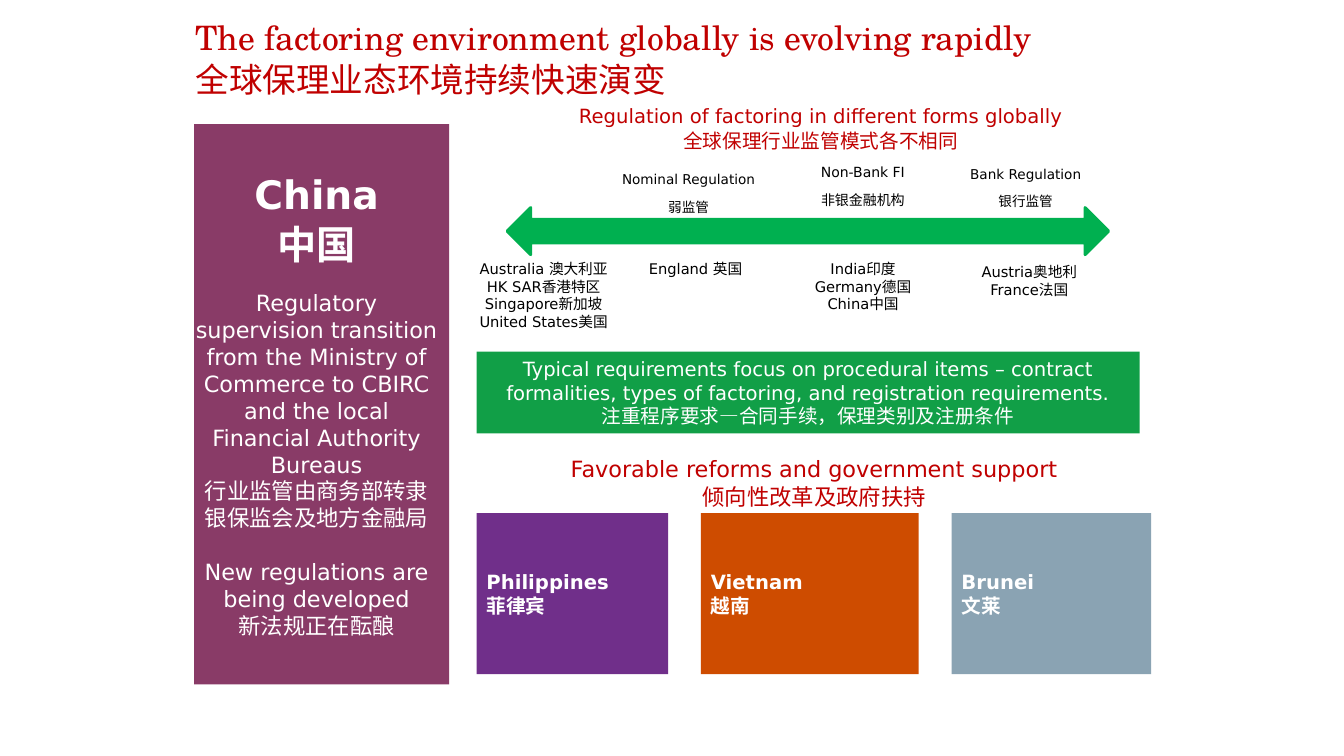
from pptx import Presentation
from pptx.dml.color import RGBColor
from pptx.enum import shapes, text
from pptx.util import Cm, Pt

COLORS = {
    "red": "C00000", "white": "FFFFFF", "black": "000000", "plum": "893B67",
    "arrow": "00B050", "green": "119F47", "purple": "702F8A",
    "orange": "CE4C00", "steel": "8AA3B3",
}
BODY_FONT, TITLE_FONT = "DejaVu Sans", "TeX Gyre Schola"
CENTER, LEFT = text.PP_ALIGN.CENTER, text.PP_ALIGN.LEFT
SLIM_INSETS = (0.1, 0.05, 0.1, 0.05)
DEFAULT_INSETS = (0.25, 0.13, 0.25, 0.13)


def color(name):
    return RGBColor.from_string(COLORS[name])


def add_run(paragraph, words, size, ink, bold=False, font=BODY_FONT):
    run = paragraph.add_run()
    run.text = words
    run.font.name, run.font.size, run.font.bold = font, Pt(size), bold
    run.font.color.rgb = color(ink)


def write_lines(frame, lines, size, ink, bold=False, align=CENTER,
                before=0, spacing=1.0):
    """Append one paragraph per line, reusing the empty first paragraph."""
    for line in lines:
        first = frame.paragraphs[0]
        paragraph = frame.add_paragraph() if first.runs else first
        paragraph.alignment = align
        paragraph.space_before = Pt(before)
        paragraph.line_spacing = spacing
        add_run(paragraph, line, size, ink, bold)


def prepare_frame(shape, insets, anchor):
    frame = shape.text_frame
    frame.word_wrap = True
    frame.vertical_anchor = anchor
    (frame.margin_left, frame.margin_top,
     frame.margin_right, frame.margin_bottom) = map(Cm, insets)
    return frame


def add_box(slide, box, insets=DEFAULT_INSETS):
    shape = slide.shapes.add_textbox(*map(Cm, box))
    return prepare_frame(shape, insets, text.MSO_ANCHOR.TOP)


def add_block(slide, box, fill, insets=DEFAULT_INSETS,
              kind=shapes.MSO_SHAPE.RECTANGLE):
    shape = slide.shapes.add_shape(kind, *map(Cm, box))
    shape.shadow.inherit = False
    shape.fill.solid()
    shape.fill.fore_color.rgb = color(fill)
    shape.line.fill.background()
    prepare_frame(shape, insets, text.MSO_ANCHOR.MIDDLE)
    return shape


def add_title(slide, box):
    paragraph = add_box(slide, box, SLIM_INSETS).paragraphs[0]
    paragraph.line_spacing = 1.05
    add_run(paragraph, "The factoring environment globally is evolving rapidly",
            24, "red", font=TITLE_FONT)
    paragraph.add_line_break()
    add_run(paragraph, "全球保理业态环境持续快速演变", 24, "red", font=TITLE_FONT)


def add_heading(slide, box, lines, size):
    write_lines(add_box(slide, box, SLIM_INSETS), lines, size, "red", spacing=1.05)


def add_china_panel(slide, box):
    frame = add_block(slide, box, "plum", (0, 0.13, 0.25, 0.13)).text_frame
    write_lines(frame, ["China", "中国"], 28, "white", bold=True, before=2)
    sections = [
        (16, ["Regulatory supervision transition from the Ministry of Commerce "
              "to CBIRC and the local Financial Authority Bureaus",
              "行业监管由商务部转隶银保监会及地方金融局"]),
        (19, ["New regulations are being developed", "新法规正在酝酿"]),
    ]
    for gap, lines in sections:
        write_lines(frame, lines[:1], 16, "white", before=gap)
        write_lines(frame, lines[1:], 16, "white")


def add_regulation_scale(slide, box):
    """Double arrow with regulation types above it and countries below."""
    left, top, width, height = box
    arrow = add_block(slide, box, "arrow",
                      kind=shapes.MSO_SHAPE.LEFT_RIGHT_ARROW)
    arrow.line.color.rgb = color("arrow")
    arrow.line.width = Pt(2)

    regulation_types = [  # offset right, rise above arrow, width, size, lines
        (2.01, 1.04, 5.13, 9.7, ["Nominal Regulation", "弱监管"]),
        (6.55, 1.25, 4.83, 10, ["Non-Bank FI", "非银金融机构"]),
        (10.77, 1.19, 4.6, 9.7, ["Bank Regulation", "银行监管"]),
    ]
    for offset, rise, label_width, size, lines in regulation_types:
        frame = add_box(slide, (left + offset, top - rise, label_width, 1.3))
        write_lines(frame, lines, size, "black", before=8)

    countries = [  # offset right, drop below arrow, width, lines
        (-1.24, 0, 4.32, ["Australia 澳大利亚", "HK SAR香港特区",
                          "Singapore新加坡", "United States美国"]),
        (3.15, 0, 3.2, ["England 英国"]),
        (7.37, 0, 3.2, ["India印度", "Germany德国", "China中国"]),
        (11.56, 0.08, 3.2, ["Austria奥地利", "France法国"]),
    ]
    for offset, drop, label_width, lines in countries:
        frame = add_box(slide, (left + offset, top + height + drop,
                                label_width, 1.98))
        write_lines(frame, lines, 10.5, "black")


def add_requirements(slide, box):
    frame = add_block(slide, box, "green").text_frame
    write_lines(frame, [
        "Typical requirements focus on procedural items – contract formalities, "
        "types of factoring, and registration requirements.",
        "注重程序要求—合同手续，保理类别及注册条件"], 14, "white")


def add_reform_cards(slide, box):
    """Row of country cards with equal gaps across the box."""
    left, top, width, height = box
    cards = [
        (4.83, "purple", ["Philippines", "菲律宾"]),
        (5.49, "orange", ["Vietnam", "越南"]),
        (5.03, "steel", ["Brunei", "文莱"]),
    ]
    gap = (width - sum(card[0] for card in cards)) / (len(cards) - 1)
    for card_width, fill, lines in cards:
        card = add_block(slide, (left, top, card_width, height), fill)
        write_lines(card.text_frame, lines, 14, "white", bold=True, align=LEFT)
        left += card_width + gap


def main():
    presentation = Presentation()
    presentation.slide_width, presentation.slide_height = Cm(33.87), Cm(19.05)
    slide = presentation.slides.add_slide(presentation.slide_layouts[6])

    add_title(slide, (4.83, 0.33, 24.18, 2.26))
    add_china_panel(slide, (4.89, 3.13, 6.43, 14.12))
    add_heading(slide, (12.34, 2.54, 16.69, 1.37),
                ["Regulation of factoring in different forms globally",
                 "全球保理行业监管模式各不相同"], 14)
    add_regulation_scale(slide, (12.78, 5.23, 15.16, 1.19))
    add_requirements(slide, (12.01, 8.86, 16.71, 2.06))
    add_heading(slide, (12.01, 11.38, 17.02, 1.55),
                ["Favorable reforms and government support",
                 "倾向性改革及政府扶持"], 16)
    add_reform_cards(slide, (12.01, 12.93, 17, 4.06))
    presentation.save("out.pptx")


if __name__ == "__main__":
    main()
